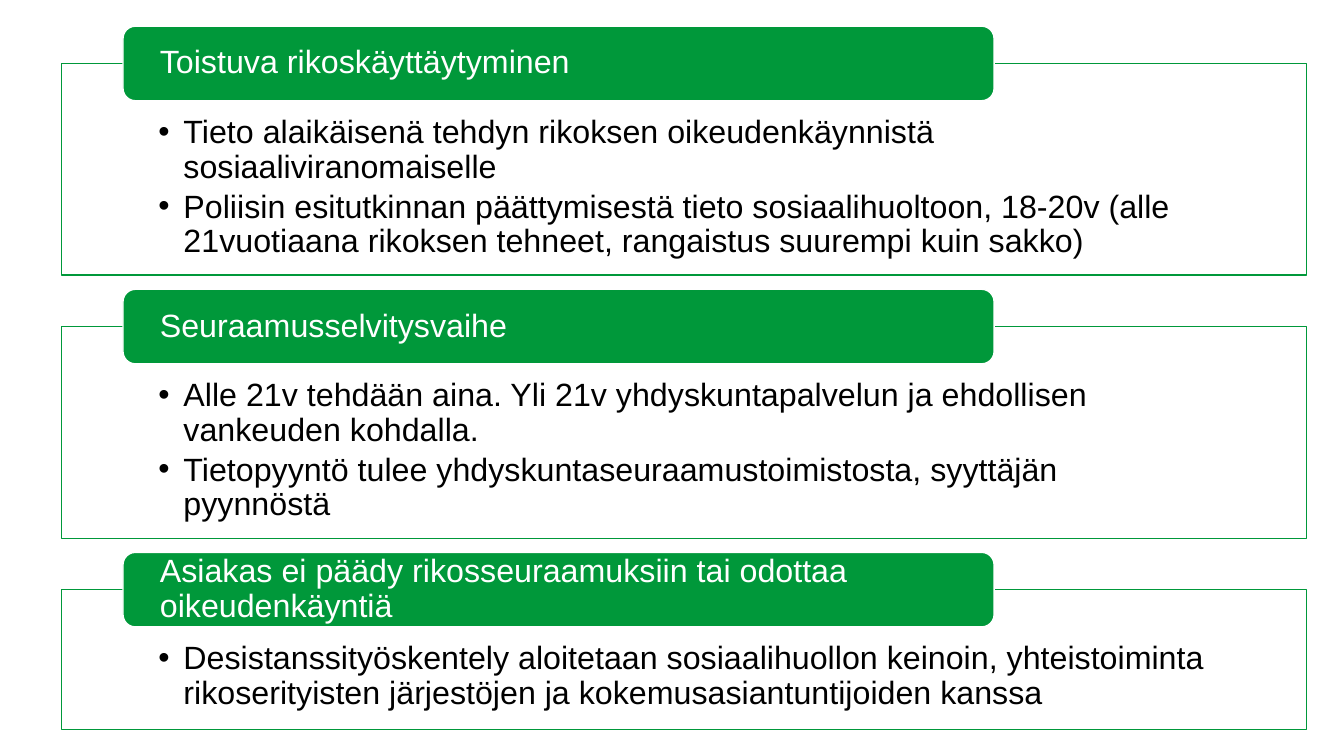
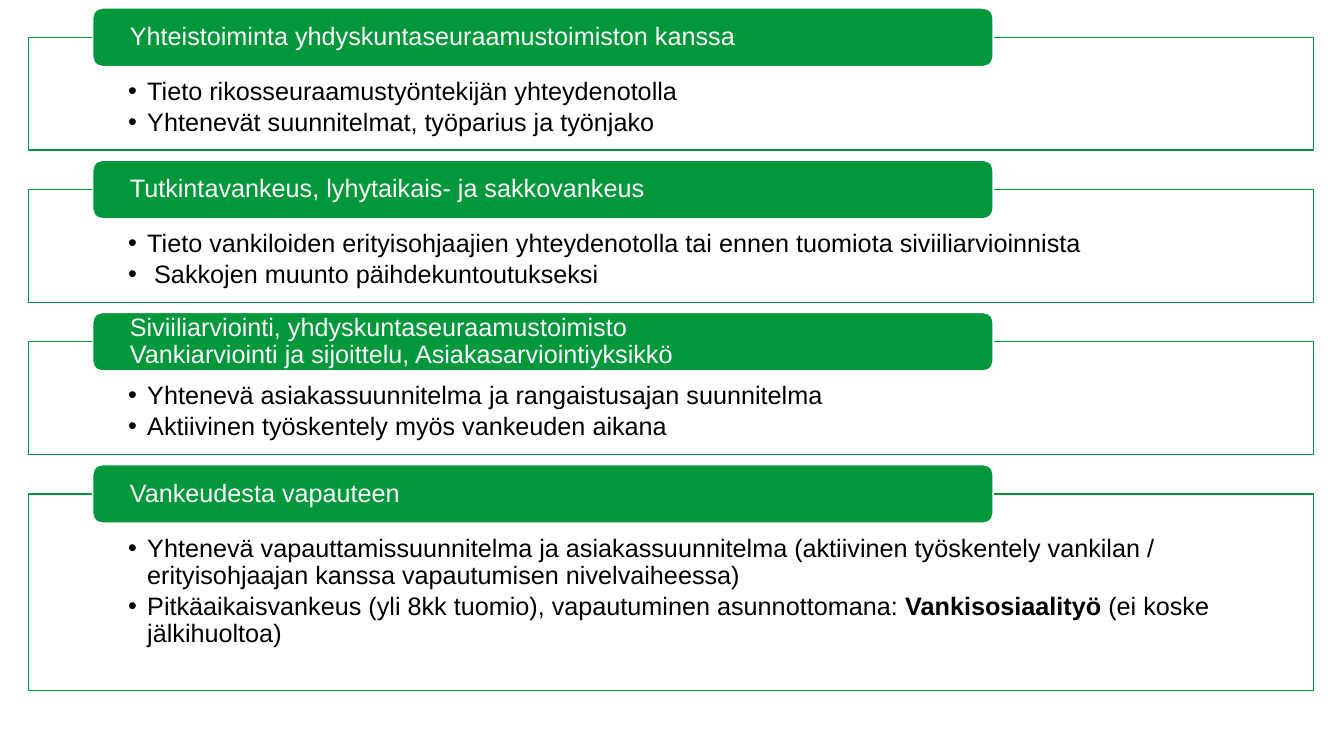
from dataclasses import dataclass

from lxml import etree
from pptx import Presentation
from pptx.dml.color import RGBColor
from pptx.enum import shapes, text
from pptx.oxml import ns
from pptx.util import Inches, Pt


@dataclass(frozen=True)
class Theme:
    green: RGBColor = RGBColor(0x00, 0x98, 0x3A)
    white: RGBColor = RGBColor(0xFF, 0xFF, 0xFF)
    black: RGBColor = RGBColor(0x00, 0x00, 0x00)
    font: str = "Arial"
    line_width: float = 1
    line_spacing: float = 0.9
    bullet_gap: float = 0.15  # share of the type size
    panel_opacity: int = 90


@dataclass(frozen=True)
class StackLayout:
    """Measures of one slide's stack of panels, in inches and points."""
    size: float
    left: float
    top: float
    width: float
    gap: float
    heading_left: float
    heading_width: float
    heading_height: float
    heading_inset: float
    panel_insets: tuple  # side, top, bottom
    indent: float


@dataclass(frozen=True)
class Section:
    heading: str
    height: float
    bullets: tuple  # ** encloses bold words


THEME = Theme()

OFFENDING_LAYOUT = StackLayout(
    size=23, left=0.61, top=0.63, width=12.35, gap=0.51,
    heading_left=1.22, heading_width=8.64, heading_height=0.74,
    heading_inset=0.33, panel_insets=(0.96, 0.52, 0.18), indent=0.25)

SANCTION_LAYOUT = StackLayout(
    size=18, left=0.28, top=0.37, width=12.75, gap=0.39,
    heading_left=0.92, heading_width=8.93, heading_height=0.58,
    heading_inset=0.34, panel_insets=(0.99, 0.41, 0.14), indent=0.19)

OFFENDING = (
    Section("Toistuva rikoskäyttäytyminen", 2.1, (
        "Tieto alaikäisenä tehdyn rikoksen oikeudenkäynnistä sosiaaliviranomaiselle",
        "Poliisin esitutkinnan päättymisestä tieto sosiaalihuoltoon, 18-20v (alle "
        "21vuotiaana rikoksen tehneet, rangaistus suurempi kuin sakko)")),
    Section("Seuraamusselvitysvaihe", 2.1, (
        "Alle 21v tehdään aina. Yli 21v yhdyskuntapalvelun ja ehdollisen "
        "vankeuden kohdalla.",
        "Tietopyyntö tulee yhdyskuntaseuraamustoimistosta, syyttäjän pyynnöstä")),
    Section("Asiakas ei päädy rikosseuraamuksiin tai odottaa oikeudenkäyntiä", 1.39, (
        "Desistanssityöskentely aloitetaan sosiaalihuollon keinoin, yhteistoiminta "
        "rikoserityisten järjestöjen ja kokemusasiantuntijoiden kanssa",)),
)

SANCTIONS = (
    Section("Yhteistoiminta yhdyskuntaseuraamustoimiston kanssa", 1.12, (
        "Tieto rikosseuraamustyöntekijän yhteydenotolla",
        "Yhtenevät suunnitelmat, työparius ja työnjako")),
    Section("Tutkintavankeus, lyhytaikais- ja sakkovankeus", 1.12, (
        "Tieto vankiloiden erityisohjaajien yhteydenotolla tai ennen tuomiota "
        "siviiliarvioinnista",
        " Sakkojen muunto päihdekuntoutukseksi")),
    Section("Siviiliarviointi, yhdyskuntaseuraamustoimisto\n"
            "Vankiarviointi ja sijoittelu, Asiakasarviointiyksikkö", 1.12, (
        "Yhtenevä asiakassuunnitelma ja rangaistusajan suunnitelma",
        "Aktiivinen työskentely myös vankeuden aikana")),
    Section("Vankeudesta vapauteen", 1.95, (
        "Yhtenevä vapauttamissuunnitelma ja asiakassuunnitelma (aktiivinen "
        "työskentely vankilan / erityisohjaajan kanssa vapautumisen nivelvaiheessa)",
        "Pitkäaikaisvankeus (yli 8kk tuomio), vapautuminen asunnottomana: "
        "**Vankisosiaalityö** (ei koske jälkihuoltoa)")),
)


def add_box(slide, kind, bounds, fill, line):
    box = slide.shapes.add_shape(kind, *map(Inches, bounds))
    box.shadow.inherit = False
    box.fill.solid()
    box.fill.fore_color.rgb = fill
    box.line.color.rgb = line
    box.line.width = Pt(THEME.line_width)
    return box


def set_frame(box, anchor, side, top=0, bottom=0):
    frame = box.text_frame
    frame.word_wrap = True
    frame.vertical_anchor = anchor
    margins = dict(margin_left=side, margin_right=side,
                   margin_top=top, margin_bottom=bottom)
    for name, inset in margins.items():
        setattr(frame, name, Inches(inset))
    return frame


def format_paragraph(paragraph, size, color):
    paragraph.alignment = text.PP_ALIGN.LEFT
    paragraph.line_spacing = THEME.line_spacing
    for run in paragraph.runs:
        run.font.name = THEME.font
        run.font.size = Pt(size)
        run.font.color.rgb = color


def set_bullet(paragraph, indent):
    properties = paragraph._p.get_or_add_pPr()
    properties.set("marL", str(Inches(indent)))
    properties.set("indent", str(-Inches(indent)))
    etree.SubElement(properties, ns.qn("a:buFont")).set("typeface", THEME.font)
    etree.SubElement(properties, ns.qn("a:buChar")).set("char", "•")


def set_opacity(box, percent):
    color = box.fill._xPr.find(ns.qn("a:solidFill"))[0]
    etree.SubElement(color, ns.qn("a:alpha")).set("val", str(percent * 1000))


def add_panel(slide, layout, top, section):
    panel = add_box(slide, shapes.MSO_SHAPE.RECTANGLE,
                    (layout.left, top, layout.width, section.height),
                    THEME.white, THEME.green)
    set_opacity(panel, THEME.panel_opacity)
    frame = set_frame(panel, text.MSO_ANCHOR.TOP, *layout.panel_insets)
    for index, bullet in enumerate(section.bullets):
        paragraph = frame.add_paragraph() if index else frame.paragraphs[0]
        set_bullet(paragraph, layout.indent)
        for part, words in enumerate(bullet.split("**")):
            run = paragraph.add_run()
            run.text = words
            run.font.bold = part % 2 == 1
        format_paragraph(paragraph, layout.size, THEME.black)
        paragraph.space_after = Pt(layout.size * THEME.bullet_gap)


def add_heading(slide, layout, panel_top, heading):
    """Add a bar centred on the top edge of its panel."""
    bar = add_box(slide, shapes.MSO_SHAPE.ROUNDED_RECTANGLE,
                  (layout.heading_left, panel_top - layout.heading_height / 2,
                   layout.heading_width, layout.heading_height),
                  THEME.green, THEME.white)
    frame = set_frame(bar, text.MSO_ANCHOR.MIDDLE, layout.heading_inset)
    paragraph = frame.paragraphs[0]
    paragraph.text = heading
    format_paragraph(paragraph, layout.size, THEME.white)


def add_stack_slide(deck, layout, sections):
    slide = deck.slides.add_slide(deck.slide_layouts.get_by_name("Blank"))
    top = layout.top
    for section in sections:
        add_panel(slide, layout, top, section)
        add_heading(slide, layout, top, section.heading)
        top += section.height + layout.gap


def main():
    deck = Presentation()
    deck.slide_width, deck.slide_height = Inches(13.33), Inches(7.5)
    add_stack_slide(deck, OFFENDING_LAYOUT, OFFENDING)
    add_stack_slide(deck, SANCTION_LAYOUT, SANCTIONS)
    deck.save("out.pptx")


if __name__ == "__main__":
    main()
